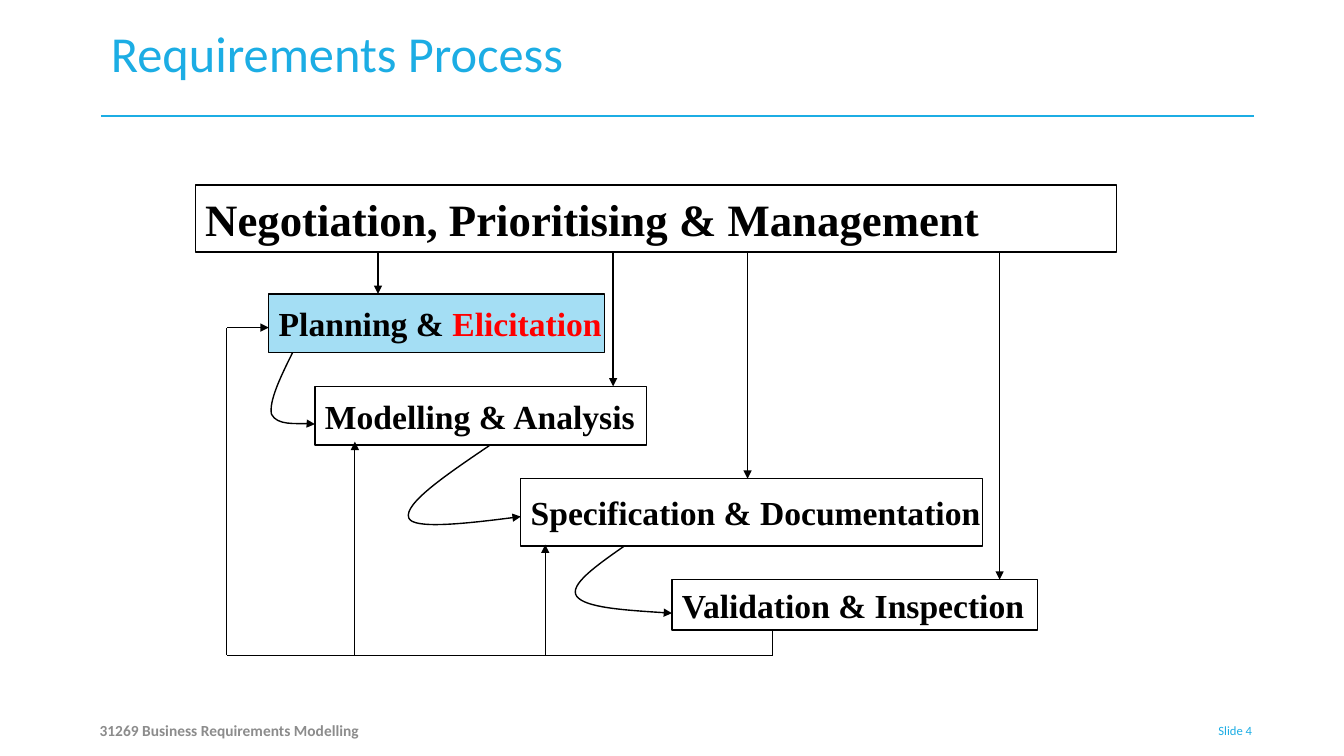
from lxml.etree import SubElement
from pptx import Presentation
from pptx.dml.color import RGBColor
from pptx.enum.shapes import MSO_CONNECTOR, MSO_SHAPE
from pptx.enum.text import MSO_ANCHOR, MSO_AUTO_SIZE, PP_ALIGN
from pptx.oxml.ns import qn
from pptx.util import Pt

COLORS = {name: RGBColor.from_string(value) for name, value in {
    "accent": "1CADE4", "highlight": "A4DEF4", "red": "FF0000",
    "black": "000000", "white": "FFFFFF", "grey": "8C8C8C",
}.items()}


def style_line(shape, color="black", width=1, arrow=False):
    shape.line.color.rgb = COLORS[color]
    shape.line.width = Pt(width)
    properties = shape._element.spPr
    if arrow:
        SubElement(properties.find(qn("a:ln")), qn("a:tailEnd"), type="triangle")
    if properties.find(qn("a:effectLst")) is None:
        SubElement(properties, qn("a:effectLst"))


def add_line(start, end, **style):
    line = slide.shapes.add_connector(
        MSO_CONNECTOR.STRAIGHT, *(Pt(value) for value in (*start, *end)))
    style_line(line, **style)


presentation = Presentation()
presentation.slide_width, presentation.slide_height = Pt(960), Pt(540)
slide = presentation.slides.add_slide(presentation.slide_layouts[5])

# Title and rule
title = slide.shapes.title
title.left, title.top, title.width, title.height = Pt(72), Pt(12.24), Pt(630.7), Pt(72)
title.text_frame.text = "Requirements Process"
title.text_frame.vertical_anchor = MSO_ANCHOR.TOP
title.text_frame.auto_size = MSO_AUTO_SIZE.NONE
paragraph = title.text_frame.paragraphs[0]
paragraph.alignment = PP_ALIGN.LEFT
paragraph.font.size = Pt(36)
paragraph.font.name = "Calibri"
paragraph.font.color.rgb = COLORS["accent"]
add_line((72, 82.8), (895.7, 82.8), color="accent")

# Footer
for text, left, width, size, color, bold, alignment in [
    ("31269 Business Requirements Modelling", 64.1, 485.3, 11, "grey", True, PP_ALIGN.LEFT),
    ("Slide 4", 835.2, 66.2, 9, "accent", False, PP_ALIGN.RIGHT),
]:
    footer = slide.shapes.add_textbox(Pt(left), Pt(507.6), Pt(width), Pt(28.8))
    footer.text_frame.word_wrap = True
    footer.text_frame.vertical_anchor = MSO_ANCHOR.MIDDLE
    paragraph = footer.text_frame.paragraphs[0]
    paragraph.text = text
    paragraph.alignment = alignment
    paragraph.font.size = Pt(size)
    paragraph.font.name = "Calibri"
    paragraph.font.bold = bold
    paragraph.font.color.rgb = COLORS[color]

# Process stages
for runs, left, top, width, height, size, fill in [
    ([("Planning & ", "black"), ("Elicitation", "red")], 192, 210, 240, 42, 24, "highlight"),
    ([("Modelling & Analysis", "black")], 225, 276, 237, 42, 24, "white"),
    ([("Specification & Documentation", "black")], 372, 342, 330, 48, 24, "white"),
    ([("Validation & Inspection", "black")], 480, 414, 261, 36, 24, "white"),
    ([("Negotiation, Prioritising & Management", "black")], 139.5, 132, 658, 48, 32, "white"),
]:
    stage = slide.shapes.add_shape(
        MSO_SHAPE.RECTANGLE, Pt(left), Pt(top), Pt(width), Pt(height))
    stage.shadow.inherit = False
    stage.fill.solid()
    stage.fill.fore_color.rgb = COLORS[fill]
    style_line(stage)
    stage.text_frame.word_wrap = False
    stage.text_frame.vertical_anchor = MSO_ANCHOR.MIDDLE
    paragraph = stage.text_frame.paragraphs[0]
    paragraph.alignment = PP_ALIGN.LEFT
    paragraph.font.size = Pt(size)
    paragraph.font.name = "Times New Roman"
    paragraph.font.bold = True
    for text, color in runs:
        run = paragraph.add_run()
        run.text = text
        run.font.color.rgb = COLORS[color]

# Curved arrows from each stage to the next: a start and two Bezier segments
for start, *controls in [
    [(209, 252), (200, 269.5), (192, 287), (194.5, 295.5), (197.5, 304), (219.5, 301.5), (225, 303)],
    [(350, 318), (319, 339), (288, 360.5), (291.5, 369.5), (295, 378), (333.5, 373.5), (372, 369)],
    [(445.5, 390), (426, 404), (406, 418.5), (412, 426), (417.5, 434), (448.5, 436), (480, 438)],
]:
    builder = slide.shapes.build_freeform(*start, scale=Pt(1))
    builder.add_line_segments(controls, close=False)
    curve = builder.convert_to_shape()
    curve.shadow.inherit = False
    curve.fill.background()
    style_line(curve, arrow=True)
    segments = curve._element.xpath(".//a:lnTo")
    for index in range(0, len(segments), 3):
        bezier = SubElement(segments[index].getparent(), qn("a:cubicBezTo"))
        for segment in segments[index:index + 3]:
            bezier.append(segment[0])
            segment.getparent().remove(segment)

# Management arrows down to every stage
for x, bottom in [(270, 210), (438, 276), (534, 342), (714, 414)]:
    add_line((x, 180), (x, bottom), arrow=True)

# Feedback loop from validation
feedback = [(552, 450), (552, 468), (162, 468), (162, 234), (192, 234)]
for start, end in zip(feedback, feedback[1:]):
    add_line(start, end, arrow=end == feedback[-1])
for x, top in [(389.5, 389), (253.5, 315.5)]:
    add_line((x, 468), (x, top), width=0.75, arrow=True)

presentation.save("out.pptx")
